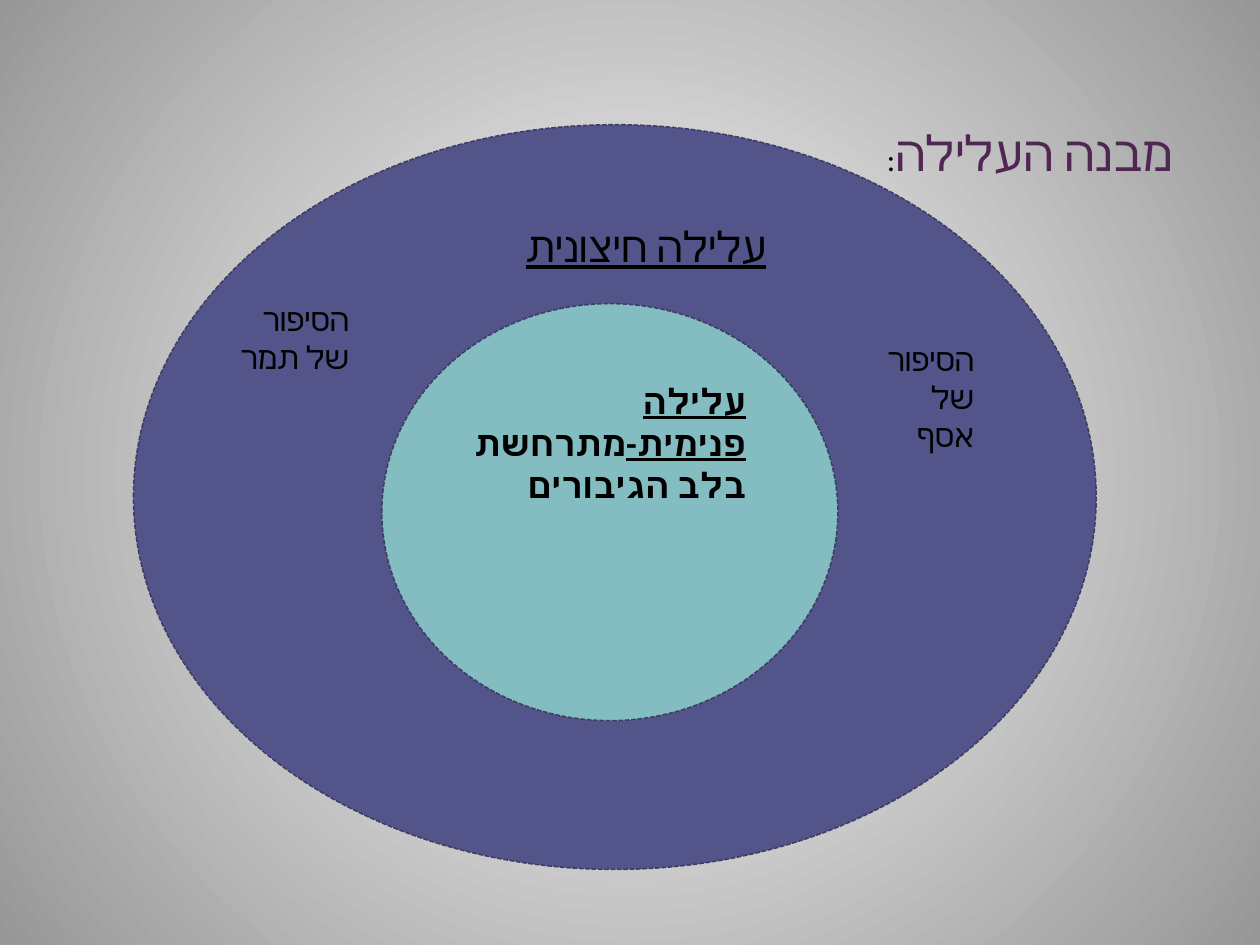
import pptx
import pptx.util
import pptx.dml.color
import pptx.enum.dml
import pptx.enum.shapes
import pptx.enum.text
import pptx.oxml

COLS, ROWS = 100, 75
INK, PLUM, INDIGO, TEAL, EDGE = "000000", "502652", "53548A", "83BCC1", "3D3E66"
FONT = "Calibri"
FRAME = dict(
    word_wrap=True,
    auto_size=pptx.enum.text.MSO_AUTO_SIZE.SHAPE_TO_FIT_TEXT,
    vertical_anchor=pptx.enum.text.MSO_ANCHOR.TOP,
    margin_left=pptx.util.Inches(0.1),
    margin_right=pptx.util.Inches(0.1),
    margin_top=pptx.util.Inches(0.05),
    margin_bottom=pptx.util.Inches(0.05),
)

prs = pptx.Presentation()
prs.slide_width = pptx.util.Inches(10)
prs.slide_height = pptx.util.Inches(7.5)


def rgb(value):
    return pptx.dml.color.RGBColor.from_string(value)


def apply(obj, values):
    for name, value in values.items():
        setattr(obj, name, value)


def inside(box, col, row, cols, rows):
    return box[0] + col, box[1] + row, cols, rows


def emu(box):
    units = (prs.slide_width / COLS, prs.slide_height / ROWS) * 2
    return [round(n * unit) for n, unit in zip(box, units)]


def write(sp, runs):
    tf = sp.text_frame
    apply(tf, FRAME)
    p = tf.paragraphs[0]
    p.alignment = pptx.enum.text.PP_ALIGN.RIGHT
    p._p.get_or_add_pPr().set("rtl", "1")
    for text, size, color, style in runs:
        r = p.add_run()
        r.text = text
        apply(r.font, dict(name=FONT, size=pptx.util.Pt(size), **style))
        r.font.color.rgb = rgb(color)
        cs = r._r.get_or_add_rPr().makeelement(pptx.oxml.ns.qn("a:cs"), {"typeface": FONT})
        r._r.rPr.append(cs)


def add_label(slide, box, runs):
    write(slide.shapes.add_textbox(*emu(box)), runs)


def add_oval(slide, box, color):
    sp = slide.shapes.add_shape(pptx.enum.shapes.MSO_SHAPE.OVAL, *emu(box))
    sp.shadow.inherit = False
    sp.fill.solid()
    sp.fill.fore_color.rgb = rgb(color)
    sp.line.color.rgb = rgb(EDGE)
    apply(sp.line, dict(width=pptx.util.Pt(0.9),
                        dash_style=pptx.enum.dml.MSO_LINE.SQUARE_DOT))


def add_background(slide):
    fill = slide.background.fill
    fill.gradient()
    for stop, position, color in zip(fill.gradient_stops, (0, 1), ("FFFFFF", "979797")):
        stop.position = position
        stop.color.rgb = rgb(color)
    lin = slide.background._cSld.find(".//" + pptx.oxml.ns.qn("a:lin"))
    circle = pptx.oxml.parse_xml(
        '<a:path %s path="circle"><a:fillToRect l="50000" t="50000" r="50000" b="50000"/></a:path>'
        % pptx.oxml.ns.nsdecls("a"))
    lin.getparent().replace(lin, circle)


def add_title(slide, box):
    sp = slide.shapes.title
    apply(sp, dict(zip(("left", "top", "width", "height"), emu(box))))
    write(sp, [("מבנה העלילה", 28, PLUM, {}), (":", 18, INK, {})])


def add_outer_plot(slide, box):
    add_oval(slide, box, INDIGO)
    add_label(slide, inside(box, 26, 7.1, 25.2, 5),
              [("עלילה חיצונית", 24, INK, dict(underline=True))])
    for name, col, row, cols in (("תמר", 6.3, 13.4, 11.8), ("אסף", 57.5, 16.6, 10.2)):
        add_label(slide, inside(box, col, row, cols, 7.1),
                  [("הסיפור של " + name, 18, INK, {})])


def add_inner_plot(slide, box):
    add_oval(slide, box, TEAL)
    add_label(slide, inside(box, 4.7, 5.5, 25.2, 11.1), [
        ("עלילה פנימית-", 20, INK, dict(bold=True, underline=True)),
        ("מתרחשת בלב הגיבורים", 20, INK, dict(bold=True, underline=False)),
    ])


def main():
    slide = prs.slides.add_slide(prs.slide_layouts[5])
    outer = (10.6, 9.9, 76.4, 59.1)
    add_background(slide)
    add_title(slide, (5.9, 9.2, 88.2, 5.7))
    add_outer_plot(slide, outer)
    add_inner_plot(slide, inside(outer, 19.7, 14.2, 36.2, 33.1))
    prs.save("out.pptx")


if __name__ == "__main__":
    main()
